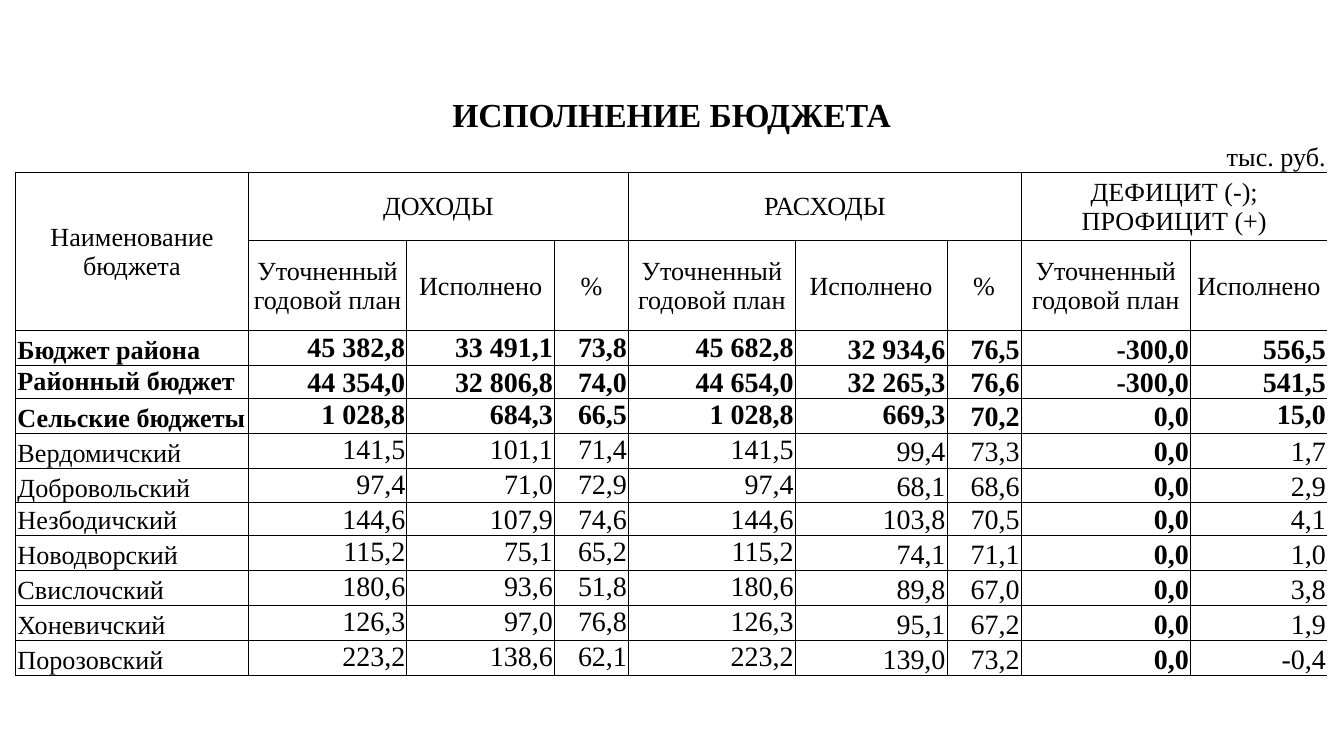
from dataclasses import dataclass

import lxml.etree
import pptx
import pptx.dml.color
import pptx.enum.text
import pptx.oxml.ns
import pptx.table
import pptx.util

Cm = pptx.util.Cm
Pt = pptx.util.Pt
Align = pptx.enum.text.PP_ALIGN
Anchor = pptx.enum.text.MSO_ANCHOR
qn = pptx.oxml.ns.qn

BLACK = pptx.dml.color.RGBColor(0, 0, 0)
FONT = "Times New Roman"
NO_STYLE = "{2D5ABB26-0587-4C30-8999-92F81FD0307C}"
TITLE_SIZE, LABEL_SIZE, AMOUNT_SIZE = 18, 14, 15
GRID_WIDTH = Pt(0.5)

COLUMN_WIDTHS = [4.39, 2.57, 0.43, 1.85, 0.94, 1.4, 3.15, 2.29, 0.58, 1.4, 3.2, 0.3, 2.29]
ROW_HEIGHTS = [0.84, 0.66, 1.3, 1.7, 0.66, 0.58, 0.66, 0.66, 0.66, 0.56] + [0.66] * 4
UNITS_SPANS = [1, 1, 2, 2, 1, 1, 2, 2, 1]
GROUP_SPANS = [1, 5, 4, 3]
BUDGET_SPANS = [1, 2, 2, 1, 1, 2, 1, 1, 2]
FIRST_BUDGET_ROW = 4
PLANNED_BALANCE = 7

PLAN, DONE, SHARE = "Уточненный годовой план", "Исполнено", "%"
GROUPS = ["Наименование бюджета", "ДОХОДЫ", "РАСХОДЫ", "ДЕФИЦИТ (-); ПРОФИЦИТ (+)"]
MEASURES = ["", PLAN, DONE, SHARE, PLAN, DONE, SHARE, PLAN, DONE]


@dataclass(frozen=True)
class Budget:
    name: str
    amounts: list[str]
    total: bool = False
    anchors: str = "bttttbbbb"


@dataclass(frozen=True)
class Entry:
    row: int
    column: int
    text: str = ""
    columns: int = 1
    rows: int = 1
    size: float = LABEL_SIZE
    bold: bool = False
    align: Align = Align.CENTER
    anchor: Anchor = Anchor.MIDDLE
    borders: str = "LRTB"


BUDGETS = [
    Budget("Бюджет района", ["45 382,8", "33 491,1", "73,8", "45 682,8", "32 934,6", "76,5", "-300,0", "556,5"], True),
    Budget("Районный бюджет", ["44 354,0", "32 806,8", "74,0", "44 654,0", "32 265,3", "76,6", "-300,0", "541,5"],
           True, "tttttbbbb"),
    Budget("Сельские бюджеты", ["1 028,8", "684,3", "66,5", "1 028,8", "669,3", "70,2", "0,0", "15,0"],
           True, "btttttbbt"),
    Budget("Вердомичский", ["141,5", "101,1", "71,4", "141,5", "99,4", "73,3", "0,0", "1,7"]),
    Budget("Добровольский", ["97,4", "71,0", "72,9", "97,4", "68,1", "68,6", "0,0", "2,9"]),
    Budget("Незбодичский", ["144,6", "107,9", "74,6", "144,6", "103,8", "70,5", "0,0", "4,1"]),
    Budget("Новодворский", ["115,2", "75,1", "65,2", "115,2", "74,1", "71,1", "0,0", "1,0"]),
    Budget("Свислочский", ["180,6", "93,6", "51,8", "180,6", "89,8", "67,0", "0,0", "3,8"]),
    Budget("Хоневичский", ["126,3", "97,0", "76,8", "126,3", "95,1", "67,2", "0,0", "1,9"]),
    Budget("Порозовский", ["223,2", "138,6", "62,1", "223,2", "139,0", "73,2", "0,0", "-0,4"]),
]


def starts(spans: list[int]) -> list[int]:
    return [sum(spans[:index]) for index in range(len(spans))]


def heading_entries() -> list[Entry]:
    entries = [Entry(0, 0, "ИСПОЛНЕНИЕ БЮДЖЕТА", len(COLUMN_WIDTHS), size=TITLE_SIZE, bold=True, borders="")]
    for column, span in zip(starts(UNITS_SPANS), UNITS_SPANS):
        units = "тыс. руб." if column + span == len(COLUMN_WIDTHS) else ""
        entries.append(Entry(1, column, units, span, align=Align.RIGHT, anchor=Anchor.BOTTOM, borders="B"))
    for column, span, group in zip(starts(GROUP_SPANS), GROUP_SPANS, GROUPS):
        entries.append(Entry(2, column, group, span, rows=1 if column else 2))
    for column, span, measure in zip(starts(BUDGET_SPANS), BUDGET_SPANS, MEASURES):
        if measure:
            entries.append(Entry(3, column, measure, span))
    return entries


def budget_entries(row: int, budget: Budget) -> list[Entry]:
    entries = []
    texts = [budget.name, *budget.amounts]
    for index, (column, span, text) in enumerate(zip(starts(BUDGET_SPANS), BUDGET_SPANS, texts)):
        entries.append(Entry(
            row, column, text, span,
            size=AMOUNT_SIZE if index else LABEL_SIZE,
            bold=budget.total or index == PLANNED_BALANCE,
            align=Align.RIGHT if index else Align.LEFT,
            anchor=Anchor.TOP if budget.anchors[index] == "t" else Anchor.BOTTOM,
        ))
    return entries


def format_cell(cell: pptx.table._Cell, borders: set[str]) -> None:
    cell.margin_left = cell.margin_right = cell.margin_top = Cm(0.03)
    cell.margin_bottom = 0
    properties = cell._tc.get_or_add_tcPr()
    for side in "LRTB":
        line = lxml.etree.SubElement(properties, qn(f"a:ln{side}"), w=str(GRID_WIDTH))
        if side in borders:
            fill = lxml.etree.SubElement(line, qn("a:solidFill"))
            lxml.etree.SubElement(fill, qn("a:srgbClr"), val=str(BLACK))
        else:
            lxml.etree.SubElement(line, qn("a:noFill"))
    cell.fill.background()
    paragraph = cell.text_frame.paragraphs[0]
    lxml.etree.SubElement(paragraph._p, qn("a:endParaRPr"), sz=str(LABEL_SIZE * 100))


def draw_entry(table: pptx.table.Table, entry: Entry) -> None:
    last_row = entry.row + entry.rows - 1
    last_column = entry.column + entry.columns - 1
    for row in range(entry.row, last_row + 1):
        for column in range(entry.column, last_column + 1):
            edges = {"L": column == entry.column, "R": column == last_column,
                     "T": row == entry.row, "B": row == last_row}
            format_cell(table.cell(row, column), {side for side in entry.borders if edges[side]})

    cell = table.cell(entry.row, entry.column)
    if entry.rows * entry.columns > 1:
        cell.merge(table.cell(last_row, last_column))
    cell.vertical_anchor = entry.anchor
    paragraph = cell.text_frame.paragraphs[0]
    paragraph.alignment = entry.align
    if entry.text:
        run = paragraph.add_run()
        run.text = entry.text
        run.font.name = FONT
        run.font.size = Pt(entry.size)
        run.font.bold = entry.bold
        run.font.color.rgb = BLACK


def main() -> None:
    presentation = pptx.Presentation()
    presentation.slide_width = Cm(25.4)
    presentation.slide_height = Cm(14.29)
    slide = presentation.slides.add_slide(presentation.slide_layouts[6])

    frame = slide.shapes.add_table(
        len(ROW_HEIGHTS), len(COLUMN_WIDTHS), Cm(0.3), Cm(1.75),
        Cm(sum(COLUMN_WIDTHS)), Cm(sum(ROW_HEIGHTS)))
    table = frame.table
    table.first_row = table.horz_banding = False
    table._tbl.tblPr.find(qn("a:tableStyleId")).text = NO_STYLE
    for column, width in zip(table.columns, COLUMN_WIDTHS):
        column.width = Cm(width)
    for row, height in zip(table.rows, ROW_HEIGHTS):
        row.height = Cm(height)

    entries = heading_entries()
    for row, budget in enumerate(BUDGETS, FIRST_BUDGET_ROW):
        entries += budget_entries(row, budget)
    for entry in entries:
        draw_entry(table, entry)

    presentation.save("out.pptx")


if __name__ == "__main__":
    main()
